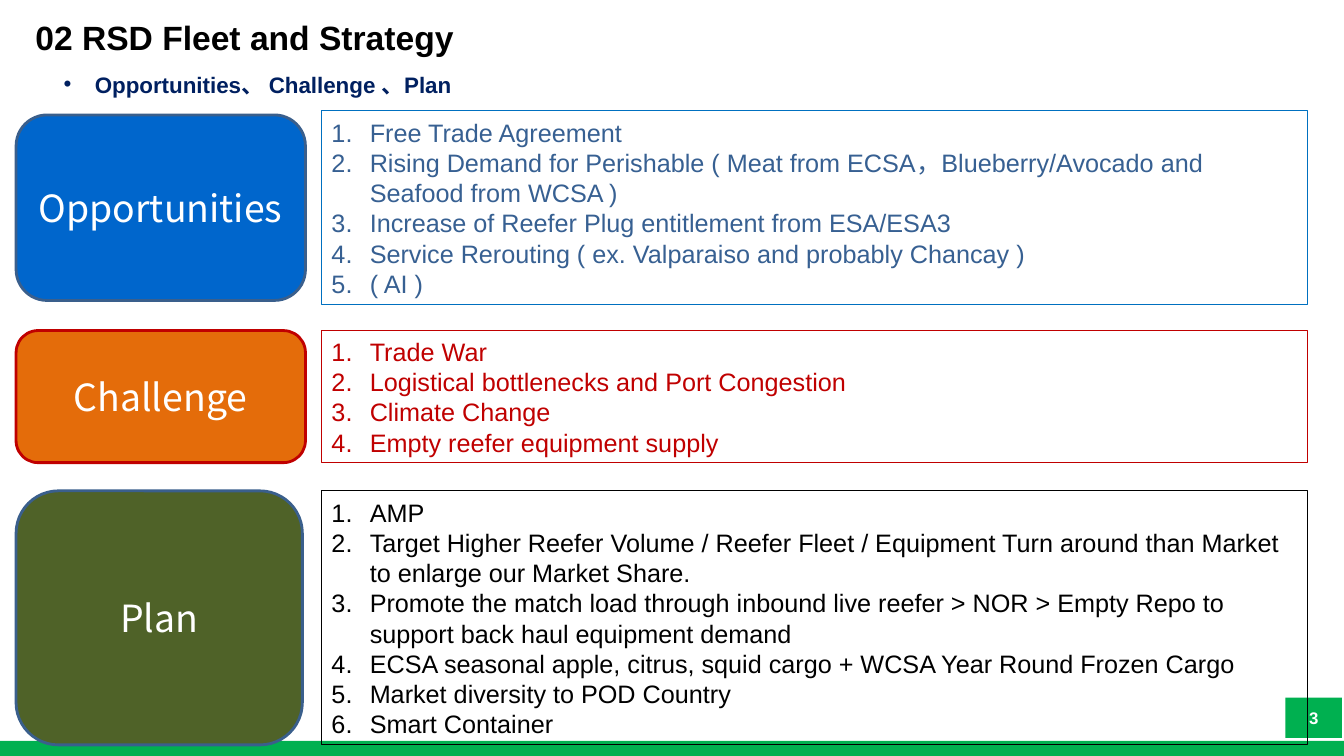
from lxml import etree
from pptx import Presentation
from pptx.dml.color import RGBColor
from pptx.enum.shapes import MSO_SHAPE
from pptx.enum.text import MSO_ANCHOR, MSO_AUTO_SIZE, PP_ALIGN
from pptx.oxml.ns import qn
from pptx.util import Inches, Pt

RECTANGLE, ROUNDED = MSO_SHAPE.RECTANGLE, MSO_SHAPE.ROUNDED_RECTANGLE
MIDDLE = MSO_ANCHOR.MIDDLE
FIXED, GROW = MSO_AUTO_SIZE.NONE, MSO_AUTO_SIZE.SHAPE_TO_FIT_TEXT
LEFT, CENTER = PP_ALIGN.LEFT, PP_ALIGN.CENTER

WIDTH, HEIGHT = Inches(13.33), Inches(7.5)
COLORS = {
    "black": "000000", "white": "FFFFFF", "green": "00B050", "navy": "002060",
    "blue": "0066CC", "sky": "0070C0", "steel": "376092", "edge": "3A5F8C",
    "orange": "E46C0A", "red": "C00000", "olive": "4F6228",
}
LABEL_LEFT, LIST_LEFT, LIST_WIDTH = 1.2, 23.93, 73.37

SECTIONS = [
    {"label": "Opportunities", "top": 14.67, "height": 25.6, "inset": 0.53, "label_width": 21.53,
     "fill": "blue", "edge": "edge", "frame": "sky", "ink": "steel",
     "items": ["Free Trade Agreement",
               "Rising Demand for Perishable ( Meat from ECSA，Blueberry/Avocado and Seafood from WCSA )",
               "Increase of Reefer Plug entitlement from ESA/ESA3",
               "Service Rerouting ( ex. Valparaiso and probably Chancay )",
               "( AI )"]},
    {"label": "Challenge", "top": 43.73, "height": 17.47, "inset": 0, "label_width": 21.53,
     "fill": "orange", "edge": "red", "frame": "red", "ink": "red",
     "items": ["Trade War",
               "Logistical bottlenecks and Port Congestion",
               "Climate Change",
               "Empty reefer equipment supply"]},
    {"label": "Plan", "top": 64.93, "height": 33.6, "inset": 0, "label_width": 21.3,
     "fill": "olive", "edge": "edge", "frame": "black", "ink": "black",
     "items": ["AMP",
               "Target Higher Reefer Volume / Reefer Fleet / Equipment Turn around than Market "
               "to enlarge our Market Share.",
               "Promote the match load through inbound live reefer > NOR > Empty Repo to "
               "support back haul equipment demand",
               "ECSA seasonal apple, citrus, squid cargo + WCSA Year Round Frozen Cargo",
               "Market diversity to POD Country",
               "Smart Container"]},
]


def color(name):
    """Return the named colour."""
    return RGBColor.from_string(COLORS[name])


def share(left, top, width, height):
    """Turn percentages of the slide into a box of lengths."""
    return [round(part * side / 100) for part, side in
            zip((left, top, width, height), (WIDTH, HEIGHT, WIDTH, HEIGHT))]


def move(shape, box):
    """Place a shape in the given box."""
    shape.left, shape.top, shape.width, shape.height = box


def add_panel(page, kind, box, fill=None, line=None, weight=0.75):
    """Add a flat shape with an optional fill and outline."""
    panel = page.shapes.add_shape(kind, *box)
    panel.shadow.inherit = False
    if fill:
        panel.fill.solid()
        panel.fill.fore_color.rgb = color(fill)
    else:
        panel.fill.background()
    if line:
        panel.line.color.rgb = color(line)
        panel.line.width = Pt(weight)
    else:
        panel.line.fill.background()
    return panel


def add_bullet(para, tag, indent, **attributes):
    """Give a paragraph a bullet element and a hanging indent."""
    properties = para._p.get_or_add_pPr()
    properties.set("marL", str(Inches(indent)))
    properties.set("indent", str(-Inches(indent)))
    if tag == "a:buChar":
        etree.SubElement(properties, qn("a:buFont"), typeface="Arial")
    etree.SubElement(properties, qn(tag), **attributes)


def write(shape, lines, size, ink, font="Arial", bold=False, align=LEFT, fit=FIXED,
          bullet=None, indent=0, side=0.1):
    """Write formatted paragraphs into a shape."""
    frame = shape.text_frame
    frame.word_wrap = True
    frame.auto_size = fit
    frame.vertical_anchor = MIDDLE
    frame.margin_left = frame.margin_right = Inches(side)
    frame.margin_top = frame.margin_bottom = Inches(0.05)
    for index, line in enumerate(lines):
        para = frame.paragraphs[0] if index == 0 else frame.add_paragraph()
        if bullet:
            add_bullet(para, bullet[0], indent, **bullet[1])
        para.alignment = align
        para.space_before = Pt(0)
        span = para.add_run()
        span.text = line
        span.font.name = font
        span.font.size = Pt(size)
        span.font.bold = bold
        span.font.color.rgb = color(ink)


def add_heading(page):
    """Fill the title and the topic line."""
    title, topics = page.shapes.title, page.placeholders[1]
    move(title, share(1.88, 0.67, 75.32, 8.4))
    write(title, ["02 RSD Fleet and Strategy"], 24, "black", bold=True)
    move(topics, share(3.98, 6.93, 44.94, 8.4))
    write(topics, ["Opportunities、 Challenge 、Plan"], 16, "navy", bold=True,
          bullet=("a:buChar", {"char": "•"}), indent=0.31)


def add_footer(page):
    """Add the bottom band and the page number."""
    add_panel(page, RECTANGLE, share(0, 98, 100, 2), fill="green")
    badge = add_panel(page, RECTANGLE, share(95.65, 92.27, 4.2, 5.33), fill="green")
    write(badge, ["3"], 12, "white", bold=True, align=CENTER)


def add_section(page, section):
    """Add a coloured label with its numbered list beside it."""
    top, height, inset = section["top"], section["height"], section["inset"]
    label_box = share(LABEL_LEFT, top + inset, section["label_width"], height - 2 * inset)
    label = add_panel(page, ROUNDED, label_box, section["fill"], section["edge"], 2)
    write(label, [section["label"]], 26.7, "white", font="Noto Sans CJK SC",
          align=CENTER, side=0)
    listing = add_panel(page, RECTANGLE, share(LIST_LEFT, top, LIST_WIDTH, height),
                        line=section["frame"])
    write(listing, section["items"], 18, section["ink"], fit=GROW,
          bullet=("a:buAutoNum", {"type": "arabicPeriod"}), indent=0.38)


def main():
    """Build and save the deck."""
    deck = Presentation()
    deck.slide_width, deck.slide_height = WIDTH, HEIGHT
    page = deck.slides.add_slide(deck.slide_layouts[1])
    add_heading(page)
    add_footer(page)
    for section in SECTIONS:
        add_section(page, section)
    deck.save("out.pptx")


if __name__ == "__main__":
    main()
